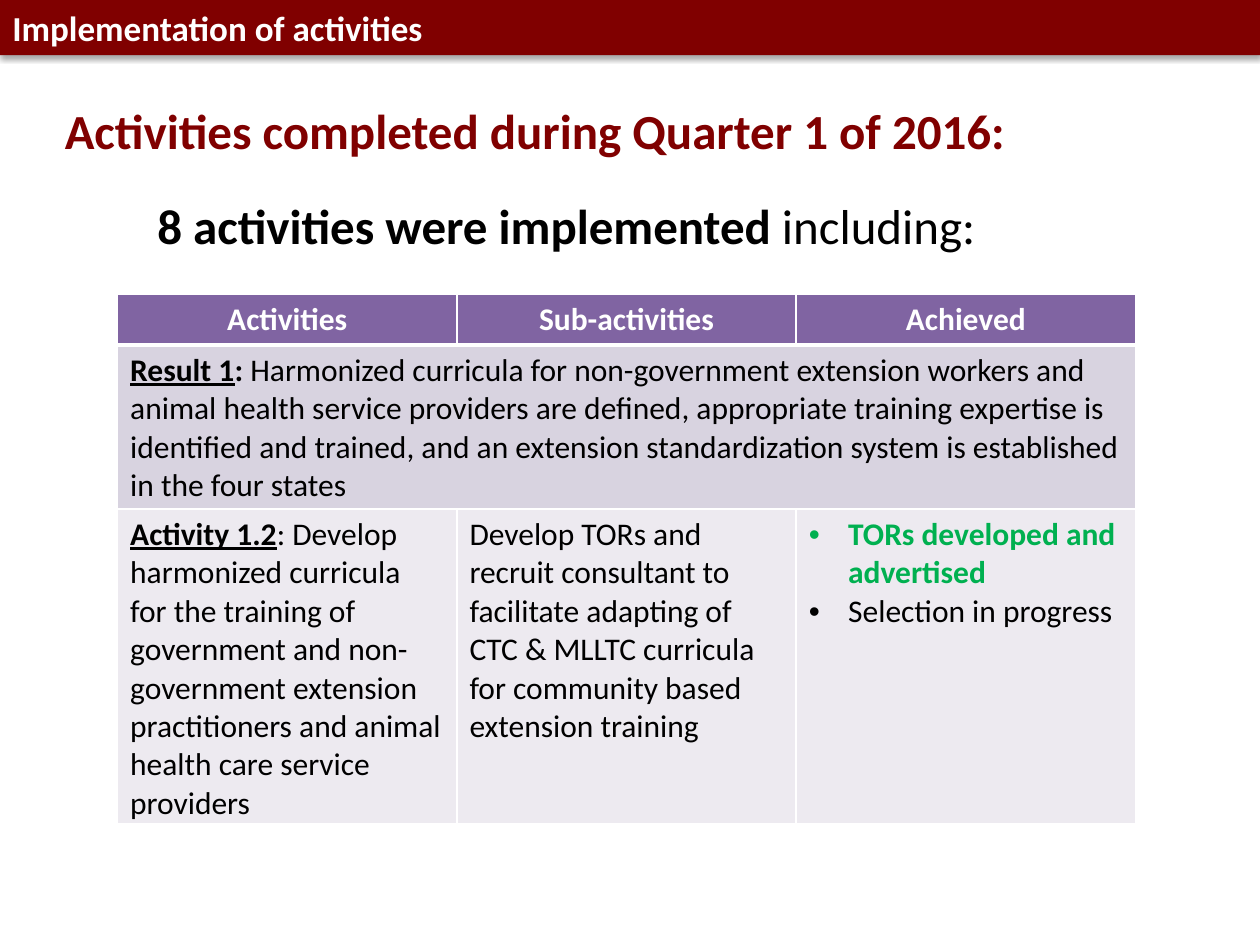
import dataclasses

import lxml.etree
import pptx
import pptx.dml.color
import pptx.enum.shapes
import pptx.enum.text
import pptx.oxml.ns
import pptx.util

Pt = pptx.util.Pt
qn = pptx.oxml.ns.qn


@dataclasses.dataclass(frozen=True)
class Theme:
    font: str = "Calibri"
    maroon: str = "800000"
    white: str = "FFFFFF"
    black: str = "000000"
    purple: str = "8064A2"
    band: str = "D8D3E0"
    pale: str = "EDEAF0"
    green: str = "00B050"
    banner: int = 20
    heading: int = 28
    body: int = 18


theme = Theme()


def write(para, text, size=theme.body, color=theme.black, bold=False, underline=False):
    span = para.add_run()
    span.text = text
    span.font.name = theme.font
    span.font.size = Pt(size)
    span.font.bold = bold
    span.font.underline = underline
    span.font.color.rgb = pptx.dml.color.RGBColor.from_string(color)


def add_element(parent, tag, **attributes):
    element = lxml.etree.SubElement(parent, qn(tag))
    for name, value in attributes.items():
        element.set(name, str(value))
    return element


deck = pptx.Presentation()
deck.slide_width, deck.slide_height = Pt(720), Pt(540)
page = deck.slides.add_slide(deck.slide_layouts[6])

# Headings
headings = [
    (30, 54, 564, [("Activities completed during Quarter 1 of 2016:", theme.maroon, True)]),
    (82.8, 108, 553, [("8 activities were implemented ", theme.black, True),
                      ("including:", theme.black, False)]),
]
for left, top, width, spans in headings:
    box = page.shapes.add_textbox(Pt(left), Pt(top), Pt(width), Pt(41.2))
    box.text_frame.word_wrap = True
    for text, color, bold in spans:
        write(box.text_frame.paragraphs[0], text, size=theme.heading, color=color, bold=bold)

# Banner with a soft shadow below it
banner = page.shapes.add_shape(
    pptx.enum.shapes.MSO_SHAPE.RECTANGLE, 0, 0, Pt(720), Pt(31.5))
banner.fill.solid()
banner.fill.fore_color.rgb = pptx.dml.color.RGBColor.from_string(theme.maroon)
banner.line.fill.background()
banner.shadow.inherit = False
effects = banner.element.spPr.find(qn("a:effectLst"))
shadow = add_element(effects, "a:outerShdw", blurRad=Pt(3.1), dist=Pt(1.8),
                     dir=90 * 60000, rotWithShape=0)
shadow_color = add_element(shadow, "a:srgbClr", val=theme.black)
add_element(shadow_color, "a:alpha", val=35000)
frame = banner.text_frame
frame.word_wrap = True
frame.vertical_anchor = pptx.enum.text.MSO_ANCHOR.MIDDLE
frame.paragraphs[0].alignment = pptx.enum.text.PP_ALIGN.LEFT
write(frame.paragraphs[0], "Implementation of activities",
      size=theme.banner, color=theme.white, bold=True)

# Table grid: fills and white borders
row_heights = [29.2, 93.2, 180]
row_fills = [theme.purple, theme.band, theme.pale]
table = page.shapes.add_table(
    3, 3, Pt(67.2), Pt(168), Pt(581.7), Pt(sum(row_heights))).table
for column in table.columns:
    column.width = Pt(193.9)
for index, (height, fill) in enumerate(zip(row_heights, row_fills)):
    table.rows[index].height = Pt(height)
    for cell in table.rows[index].cells:
        properties = cell._tc.get_or_add_tcPr()
        for side in ("L", "R", "T", "B"):
            heavy = (index, side) in ((0, "B"), (1, "T"))
            border = add_element(properties, f"a:ln{side}", w=Pt(3 if heavy else 1))
            add_element(add_element(border, "a:solidFill"), "a:srgbClr", val=theme.white)
        cell.fill.solid()
        cell.fill.fore_color.rgb = pptx.dml.color.RGBColor.from_string(fill)
table.cell(1, 0).merge(table.cell(1, 2))

# Header row
for column, title in enumerate(["Activities", "Sub-activities", "Achieved"]):
    para = table.cell(0, column).text_frame.paragraphs[0]
    para.alignment = pptx.enum.text.PP_ALIGN.CENTER
    write(para, title, color=theme.white, bold=True)

# Result row
para = table.cell(1, 0).text_frame.paragraphs[0]
write(para, "Result 1", bold=True, underline=True)
write(para, ":", bold=True)
write(para, " Harmonized curricula for non-government extension workers and animal health "
            "service providers are defined, appropriate training expertise is identified and "
            "trained, and an extension standardization system is established in the four states")

# Activity row
para = table.cell(2, 0).text_frame.paragraphs[0]
write(para, "Activity 1.2", bold=True, underline=True)
write(para, ": Develop harmonized curricula for the training of government and "
            "non-government extension practitioners and animal health care service providers")
write(table.cell(2, 1).text_frame.paragraphs[0],
      "Develop TORs and recruit consultant to facilitate adapting of CTC & MLLTC "
      "curricula for community based extension training")

# Achievements as bullets
frame = table.cell(2, 2).text_frame
achievements = [("TORs developed and advertised", theme.green, True),
                ("Selection in progress", theme.black, False)]
for index, (text, color, bold) in enumerate(achievements):
    para = frame.add_paragraph() if index else frame.paragraphs[0]
    properties = para._p.get_or_add_pPr()
    properties.set("marL", str(Pt(22.5)))
    properties.set("indent", str(-Pt(22.5)))
    add_element(properties, "a:buFont", typeface="Arial")
    add_element(properties, "a:buChar", char="•")
    write(para, text, color=color, bold=bold)

deck.save("out.pptx")
